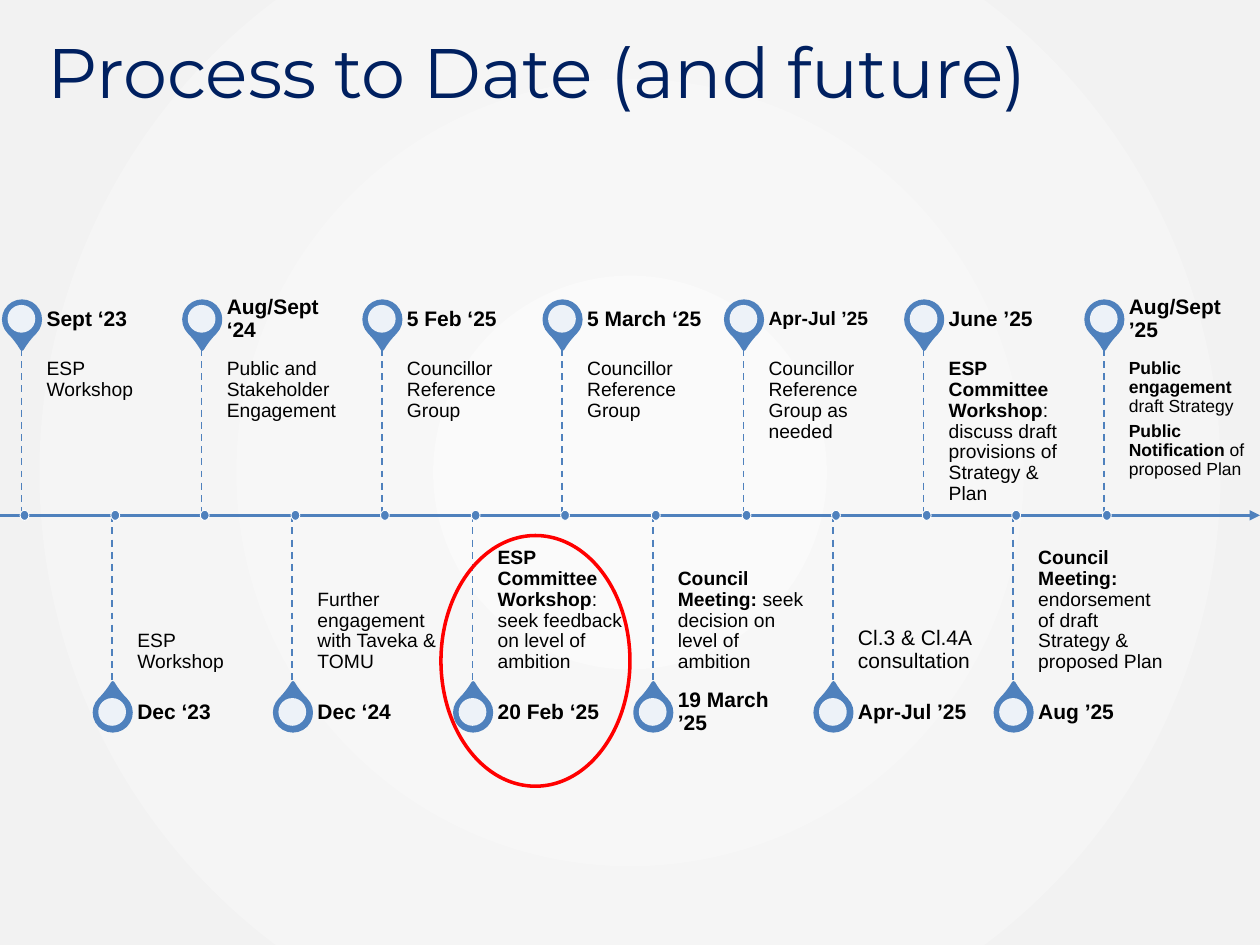
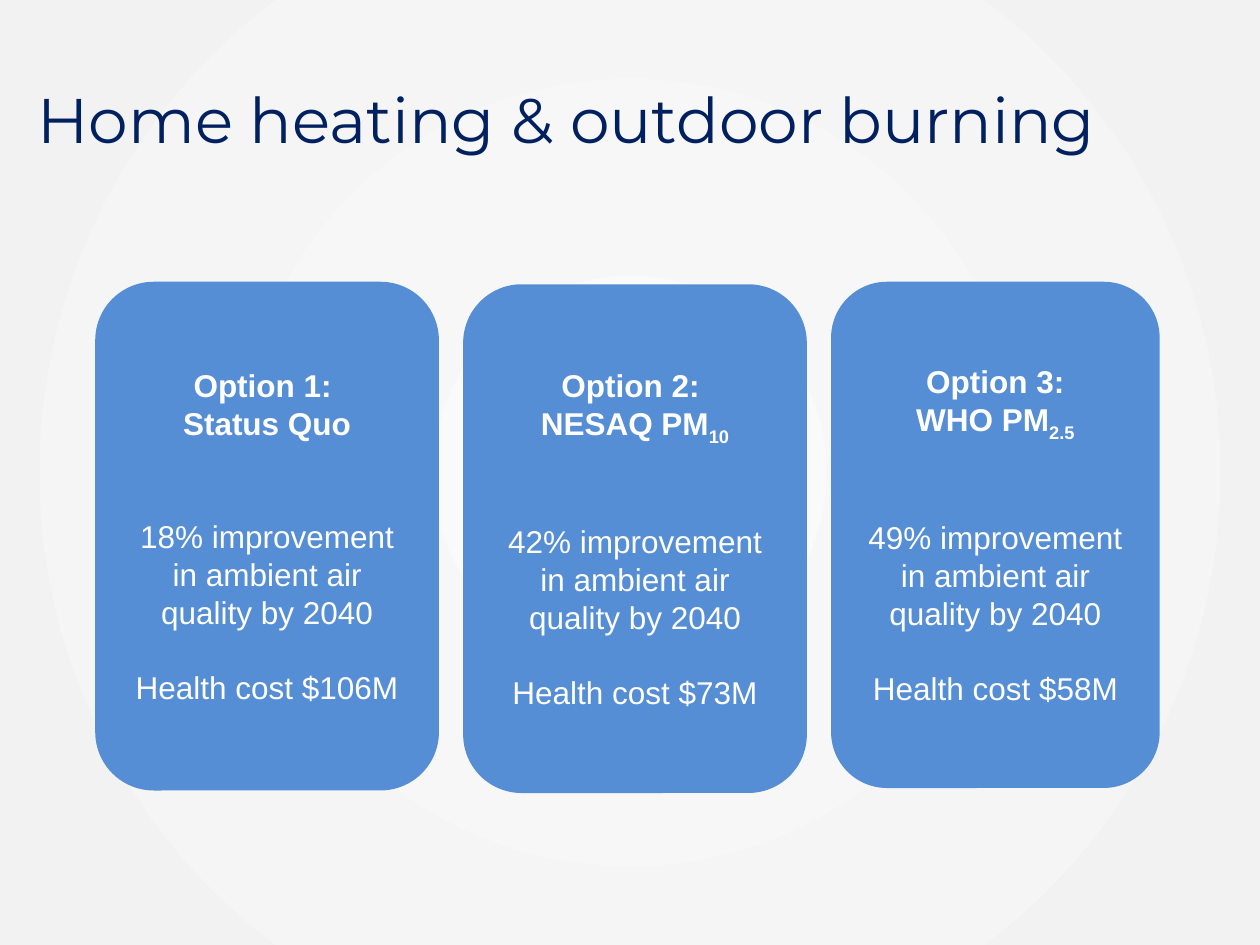
"""Build two slides: a process timeline and three heating options."""
from dataclasses import dataclass

from lxml import etree
from pptx import Presentation, util as u
from pptx.dml.color import RGBColor
from pptx.enum import dml, shapes, text
from pptx.oxml.ns import qn

PX = 9144
SHAPE = shapes.MSO_SHAPE
ANCHOR = text.MSO_ANCHOR
ALIGN = text.PP_ALIGN


@dataclass(frozen=True)
class Theme:
    """Colours, fonts and type sizes."""
    navy: str = "002060"
    blue: str = "4F81BD"
    card: str = "558ED5"
    red: str = "FF0000"
    black: str = "000000"
    white: str = "FFFFFF"
    backdrop: tuple = ("FAFAFA", "F2F2F2")
    title_font: str = "Montserrat"
    body_font: str = "Arial"
    title: int = 40
    title_small: int = 36
    option: int = 18
    date: int = 12
    body: int = 11
    small: int = 10


@dataclass(frozen=True)
class Run:
    """A stretch of text with one weight and baseline."""
    text: str
    bold: bool = False
    base: int = 0


@dataclass(frozen=True)
class Para:
    """Runs of one paragraph and the space above it in points."""
    runs: tuple
    gap: float = 0


@dataclass(frozen=True)
class Event:
    """One stop on the timeline."""
    date: str
    paras: tuple
    size: int = Theme.body
    date_size: int = Theme.date


def rgb(value):
    """Turn a hex string into a colour."""
    return RGBColor.from_string(value)


def put(obj, fmt):
    """Set each attribute named in a dict."""
    for name, value in fmt.items():
        setattr(obj, name, value)


def note(*runs, gap=0):
    """Make a paragraph from plain strings and runs."""
    return Para(tuple(Run(r) if isinstance(r, str) else r for r in runs), gap)


class Deck:
    """Hold the theme and the current slide, and draw each kind of element."""

    def __init__(self, theme):
        """Start an empty presentation."""
        self.t = theme
        self.prs = Presentation()
        put(self.prs, {"slide_width": u.Emu(1000 * PX), "slide_height": u.Emu(750 * PX)})
        self.s = None

    def slide(self):
        """Add a blank slide with the radial backdrop."""
        self.s = self.prs.slides.add_slide(self.prs.slide_layouts[6])
        fill = self.s.background.fill
        fill.gradient()
        for stop, colour in zip(fill.gradient_stops, self.t.backdrop):
            stop.color.rgb = rgb(colour)
        grad = self.s.element.xpath(".//a:gradFill")[0]
        grad.remove(grad.find(qn("a:lin")))
        radial = etree.SubElement(grad, qn("a:path"), path="circle")
        etree.SubElement(radial, qn("a:fillToRect"), {side: "50000" for side in "ltrb"})

    def stroke(self, line, colour, width, dash=None):
        """Style a line or an outline."""
        line.color.rgb = rgb(colour)
        put(line, {"width": u.Pt(width), "dash_style": dash})

    def shape(self, kind, box, fill=None, line=None, width=0, rot=0, alpha=100):
        """Add a preset shape."""
        sp = self.s.shapes.add_shape(kind, *(v * PX for v in box))
        sp.shadow.inherit = False
        sp.rotation = rot
        if fill:
            sp.fill.solid()
            sp.fill.fore_color.rgb = rgb(fill)
        else:
            sp.fill.background()
        if alpha < 100:
            colour = sp._element.spPr.find(qn("a:solidFill"))[0]
            etree.SubElement(colour, qn("a:alpha"), val=str(alpha * 1000))
        if line:
            self.stroke(sp.line, line, width)
        else:
            sp.line.fill.background()
        return sp

    def line(self, x1, y1, x2, y2, width, dash=None, arrow=False):
        """Add a straight connector."""
        c = self.s.shapes.add_connector(shapes.MSO_CONNECTOR.STRAIGHT,
                                        x1 * PX, y1 * PX, x2 * PX, y2 * PX)
        self.stroke(c.line, self.t.blue, width, dash)
        if arrow:
            etree.SubElement(c.line._get_or_add_ln(), qn("a:tailEnd"), type="triangle")
        etree.SubElement(c._element.spPr, qn("a:effectLst"))

    def fill_text(self, tf, paras, size, colour, font=None, anchor=ANCHOR.MIDDLE,
                  align=ALIGN.LEFT, spacing=1.0):
        """Fill a text frame with paragraphs."""
        put(tf, {"word_wrap": True, "vertical_anchor": anchor})
        for i, para in enumerate(paras):
            p = tf.add_paragraph() if i else tf.paragraphs[0]
            put(p, {"alignment": align, "line_spacing": spacing})
            if para.gap:
                p.space_before = u.Pt(para.gap)
            for run in para.runs:
                r = p.add_run()
                r.text = run.text
                put(r.font, {"name": font or self.t.body_font, "size": u.Pt(size),
                             "bold": run.bold})
                r.font.color.rgb = rgb(colour)
                if run.base:
                    r.font._element.set("baseline", str(run.base * 1000))

    def text(self, box, paras, size, colour, insets=None, **style):
        """Add a text box, with insets as left, top, right, bottom."""
        tf = self.s.shapes.add_textbox(*(v * PX for v in box)).text_frame
        if insets:
            sides = ("margin_left", "margin_top", "margin_right", "margin_bottom")
            put(tf, {side: v * PX for side, v in zip(sides, insets)})
        self.fill_text(tf, paras, size, colour, **style)

    def title(self, words, box, size):
        """Add the slide title."""
        self.text(box, [note(words)], size, self.t.navy, font=self.t.title_font)

    def event(self, x, event, above):
        """Add a pin, its stem, date and note above or below the axis."""
        t = self.t
        axis, reach = 409, 133
        pin_y, date_y, note_y, rot = (239, 230, 277, 135) if above else (551, 542, axis, 315)
        insets = (0, 8, 8, 11) if above else (0, 11, 0, 8)
        pin = self.shape(SHAPE.TEAR, (x - 14, pin_y, 29, 29), t.blue, t.blue, 2, rot)
        pin.adjustments[0] = 1.15
        self.shape(SHAPE.OVAL, (x - 11, pin_y + 3, 22, 22), t.white, alpha=90)
        self.text((x + 20, note_y, 103, reach), event.paras, event.size, t.black, insets,
                  anchor=ANCHOR.TOP if above else ANCHOR.BOTTOM, spacing=0.9)
        self.text((x + 20, date_y, 103, 47), [note(Run(event.date, True))],
                  event.date_size, t.black, (0, 0, 8, 0), spacing=0.9)
        self.line(x, note_y, x, note_y + reach, 1, dml.MSO_LINE.DASH)
        self.shape(SHAPE.OVAL, (x - 1, axis - 4, 7, 8), t.blue, t.white, 0.5)

    def option(self, box, heading, standard, gain, cost):
        """Add one option card."""
        paras = [note(Run(heading, True)), note(*standard),
                 note(f"{gain}% improvement in ambient air quality by 2040", gap=43),
                 note(f"Health cost ${cost}M", gap=21.5)]
        sp = self.shape(SHAPE.ROUNDED_RECTANGLE, box, self.t.card, self.t.card, 2)
        self.fill_text(sp.text_frame, paras, self.t.option, self.t.white,
                       align=ALIGN.CENTER)


def timeline(deck):
    """Draw the process timeline."""
    t = deck.t
    group = (note("Councillor Reference Group"),)
    workshop = (note("ESP Workshop"),)
    committee = Run("ESP Committee Workshop", True)
    council = Run("Council Meeting: ", True)
    events = [
        Event("Sept ‘23", workshop),
        Event("Dec ‘23", workshop),
        Event("Aug/Sept ‘24", (note("Public and Stakeholder Engagement"),)),
        Event("Dec ‘24", (note("Further engagement with Taveka & TOMU"),)),
        Event("5 Feb ‘25", group),
        Event("20 Feb ‘25", (note(committee, ": seek feedback on level of ambition"),)),
        Event("5 March ‘25", group),
        Event("19 March ’25", (note(council, "seek decision on level of ambition"),)),
        Event("Apr-Jul ’25", (note("Councillor Reference Group as needed"),),
              date_size=t.body),
        Event("Apr-Jul ’25", (note("Cl.3 & Cl.4A consultation"),), size=t.date),
        Event("June ’25", (note(committee, ": discuss draft provisions of Strategy & Plan"),)),
        Event("Aug ’25", (note(council, "endorsement of draft Strategy & proposed Plan"),)),
        Event("Aug/Sept ’25", (
            note(Run("Public engagement ", True), "draft Strategy"),
            note(Run("Public Notification ", True), "of proposed Plan", gap=3.5)),
            size=t.small),
    ]
    deck.slide()
    deck.line(0, 409, 1000, 409, 1.5, arrow=True)
    for i, event in enumerate(events):
        deck.event(17 + round(71.58 * i), event, above=i % 2 == 0)
    deck.shape(SHAPE.OVAL, (350, 425, 150, 199), line=t.red, width=2)
    deck.title("Process to Date (and future)", (28, 16, 900, 80), t.title)


def options(deck):
    """Draw the three option cards."""
    deck.slide()
    deck.title("Home heating & outdoor burning", (20, 54, 960, 80), deck.t.title_small)
    cards = [
        ((77, 225, 270, 401), "Option 1: ", [Run("Status Quo", True)], 18, 106),
        ((369, 227, 270, 401), "Option 2: ",
         [Run("NESAQ PM", True), Run("10", True, -25)], 42, 73),
        ((661, 225, 258, 399), "Option 3:",
         [Run("WHO PM", True), Run("2.5", True, -25)], 49, 58),
    ]
    for card in cards:
        deck.option(*card)


def main():
    """Build and save the deck."""
    deck = Deck(Theme())
    timeline(deck)
    options(deck)
    deck.prs.save("out.pptx")


if __name__ == "__main__":
    main()
